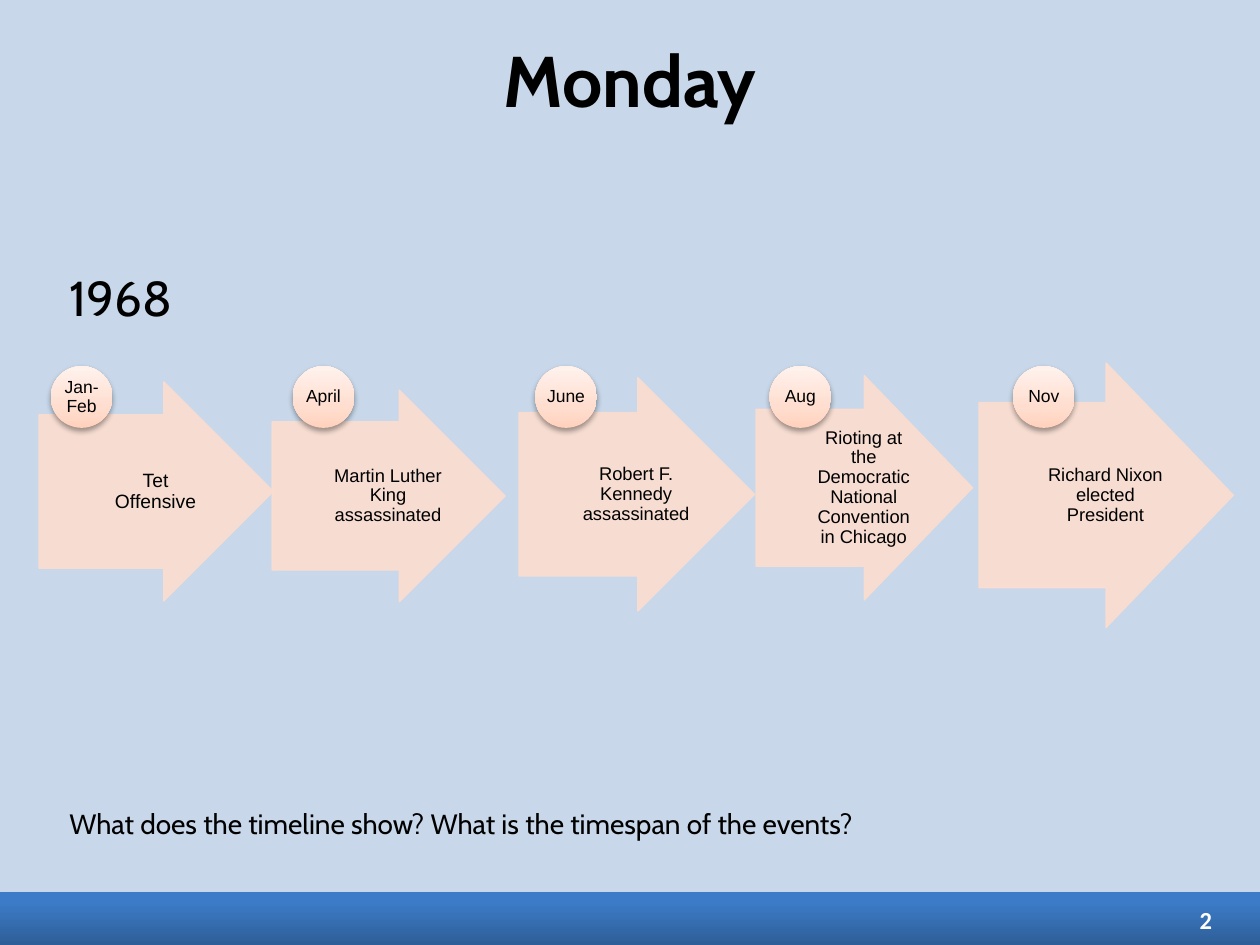
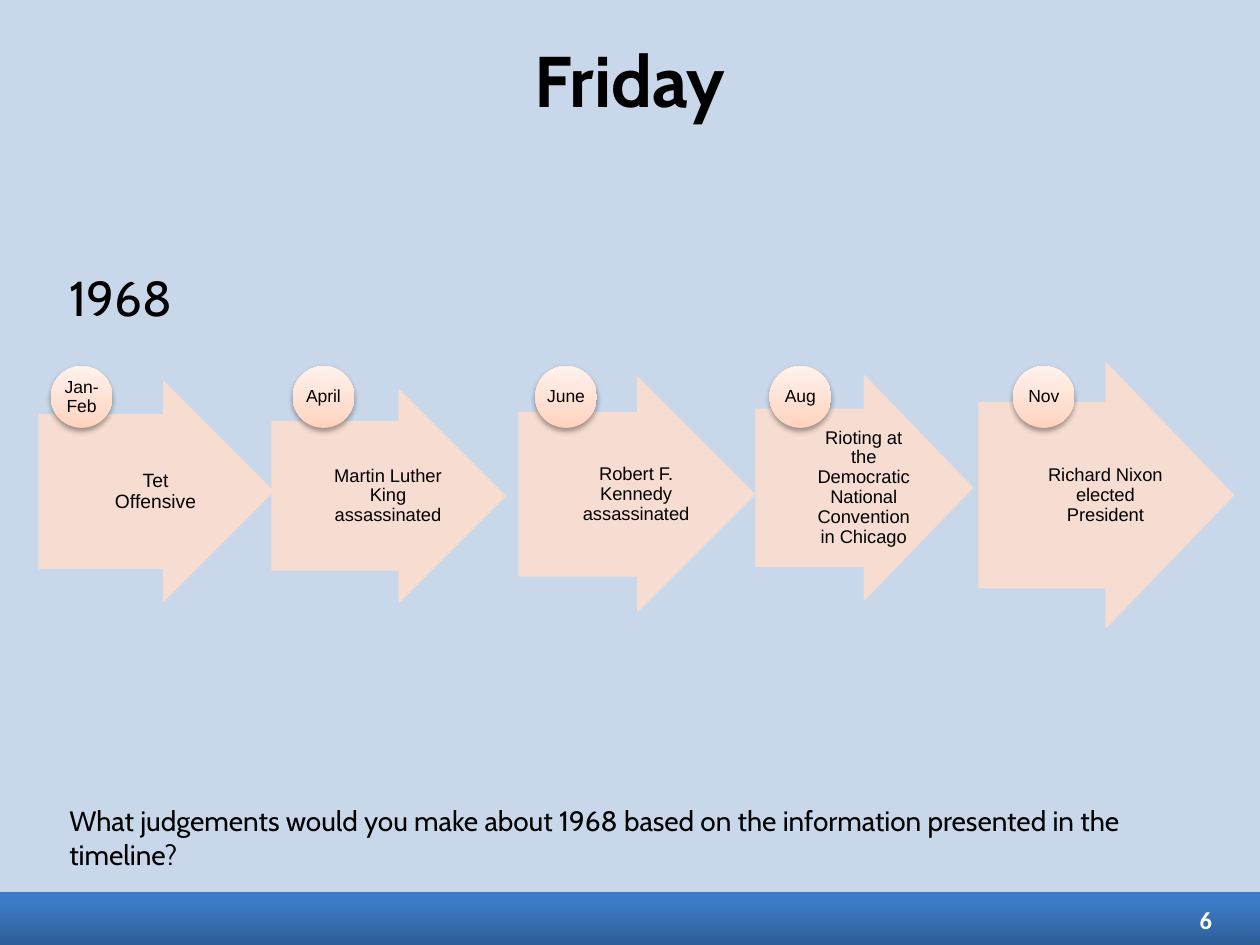
from dataclasses import dataclass
from lxml import etree
from pptx import Presentation
from pptx.dml.color import RGBColor
from pptx.enum import shapes as kinds, text as txt
from pptx.oxml import ns
from pptx.util import Pt

# Content
SLIDES = [
    dict(title="Monday", page="2", top=457.2,
         ask="What does the timeline show? What is the timespan of the events?"),
    dict(title="Friday", page="6", top=455.8,
         ask="What judgements would you make about 1968 based on the "
             "information presented in the timeline?"),
]
YEAR = "1968"
# month, event, text size, dot left, arrow (left, top, width, height)
EVENTS = [
    ("Jan-Feb", "Tet Offensive", 11, 29, (22.3, 218.2, 133.9, 125.3)),
    ("April", "Martin Luther King assassinated", 10.5, 167.2,
     (155.5, 222.9, 133.2, 121)),
    ("June", "Robert F. Kennedy assassinated", 10.5, 305.8,
     (296.6, 215.8, 134.6, 133.4)),
    ("Aug", "Rioting at the Democratic National Convention in Chicago", 10.5,
     439.7, (432, 214.6, 123.8, 128.2)),
    ("Nov", "Richard Nixon elected President", 10.5, 578.8,
     (559.4, 207.4, 145.4, 151.2)),
]


# Theme
@dataclass(frozen=True)
class Theme:
    back: str = "C8D8EA"
    ink: str = "000000"
    white: str = "FFFFFF"
    arrow: str = "FCDDCF"
    band: tuple = ((0, "2E5E97"), (80, "3C7BC7"), (100, "3A7CCA"))
    dot: tuple = ((0, "FFD2BD"), (35, "FFDED0"), (100, "FFF2ED"))
    head: str = "Cabin"
    label: str = "Arial"
    num: str = "Calibri"
    big: float = 41
    year: float = 28
    body: float = 16
    page: float = 14
    month: float = 10


T = Theme()
WIDE, HIGH = 720, 540
DOT, DOT_TOP = 35.3, 209.2
PAD = (3.6,) * 4
MID = txt.MSO_ANCHOR.MIDDLE
LEFT, MIDDLE, RIGHT = (txt.PP_ALIGN.LEFT, txt.PP_ALIGN.CENTER,
                       txt.PP_ALIGN.RIGHT)


# Text and shape helpers
def write(shape, words, font, size, color=T.ink, bold=False, align=LEFT,
          anchor=txt.MSO_ANCHOR.TOP, pad=PAD, wrap=True):
    frame = shape.text_frame
    frame.text = words
    frame.auto_size = (txt.MSO_AUTO_SIZE.NONE if wrap
                       else txt.MSO_AUTO_SIZE.SHAPE_TO_FIT_TEXT)
    frame.word_wrap = wrap
    frame.vertical_anchor = anchor
    (frame.margin_left, frame.margin_top,
     frame.margin_right, frame.margin_bottom) = map(Pt, pad)
    para = frame.paragraphs[0]
    para.alignment = align
    for run in para.runs:
        run.font.name, run.font.size, run.font.bold = font, Pt(size), bold
        run.font.color.rgb = RGBColor.from_string(color)
    return para


def add_text(slide, box, words, *args, **style):
    shape = slide.shapes.add_textbox(*map(Pt, box))
    return write(shape, words, *args, **style)


def add_form(slide, kind, box):
    shape = slide.shapes.add_shape(kind, *map(Pt, box))
    shape.shadow.inherit = False
    return shape


def node(parent, tag, **attrs):
    item = etree.SubElement(parent, ns.qn(tag))
    for key, value in attrs.items():
        item.set(key, str(value))
    return item


def shade(shape, stops):
    """Vertical gradient from the bottom up, with a soft shadow."""
    shape.line.fill.background()
    shape.fill.background()
    props = shape.element.spPr
    old = props.find(ns.qn("a:noFill"))
    grad = node(props, "a:gradFill", rotWithShape=1)
    props.replace(old, grad)
    part = node(grad, "a:gsLst")
    for pos, color in stops:
        stop = node(part, "a:gs", pos=pos * 1000)
        node(stop, "a:srgbClr", val=color)
    node(grad, "a:lin", ang=16200000, scaled=0)
    glow = node(props.find(ns.qn("a:effectLst")), "a:outerShdw",
                blurRad=Pt(3), dist=Pt(1.8), dir=5400000, rotWithShape=0)
    node(node(glow, "a:srgbClr", val=T.ink), "a:alpha", val=35000)


# Timeline parts
def add_arrow(slide, box):
    shape = add_form(slide, kinds.MSO_SHAPE.RIGHT_ARROW, box)
    shape.adjustments[0], shape.adjustments[1] = 0.7, 0.5
    shape.line.width = Pt(0.75)
    for fill in (shape.fill, shape.line.fill):
        fill.solid()
        fill.fore_color.rgb = RGBColor.from_string(T.arrow)
    for color in shape.element.spPr.iter(ns.qn("a:srgbClr")):
        node(color, "a:alpha", val=90000)


def add_event(slide, month, event, size, dot_x, box):
    x, y, w, h = box
    add_arrow(slide, box)
    para = add_text(slide, (x + w / 4, y + 0.15 * h, 0.49 * w, 0.7 * h),
                    event, T.label, size, align=MIDDLE, anchor=MID,
                    pad=(2, 0.7, 1.4, 0.7))
    para.line_spacing = 0.9
    dot = add_form(slide, kinds.MSO_SHAPE.OVAL, (dot_x, DOT_TOP, DOT, DOT))
    shade(dot, T.dot)
    para = write(dot, month, T.label, T.month, align=MIDDLE, anchor=MID,
                 pad=(0.7,) * 4)
    para.line_spacing = 0.9


# Slides
def add_band(slide, layout):
    """Draw the footer band once and place it on the layout."""
    band = add_form(slide, kinds.MSO_SHAPE.RECTANGLE,
                    (0, 509.8, WIDE, HIGH - 509.8))
    shade(band, T.band)
    layout.shapes.element.append(band.element)


def add_slide(deck, layout, title, page, top, ask):
    slide = deck.slides.add_slide(layout)
    head = slide.shapes.title
    head.left, head.top, head.width, head.height = map(Pt, (36, 0, 648, 90))
    write(head, title, T.head, T.big, bold=True, align=MIDDLE, anchor=MID)
    para = add_text(slide, (36, top, 650, 52), ask, T.head, T.body)
    para.space_before = Pt(6)
    add_text(slide, (679.7, 514.1, 16.6, 23), page, T.num, T.page, T.white,
             bold=True, align=RIGHT, anchor=MID, wrap=False)
    for event in EVENTS:
        add_event(slide, *event)
    add_text(slide, (36, 149.4, 66.2, 41), YEAR, T.head, T.year, wrap=False)
    return slide


def main():
    deck = Presentation()
    deck.slide_width, deck.slide_height = Pt(WIDE), Pt(HIGH)
    layout = deck.slide_layouts[5]
    back = layout.background.fill
    back.solid()
    back.fore_color.rgb = RGBColor.from_string(T.back)
    made = [add_slide(deck, layout, **item) for item in SLIDES]
    add_band(made[0], layout)
    deck.save("out.pptx")


if __name__ == "__main__":
    main()
